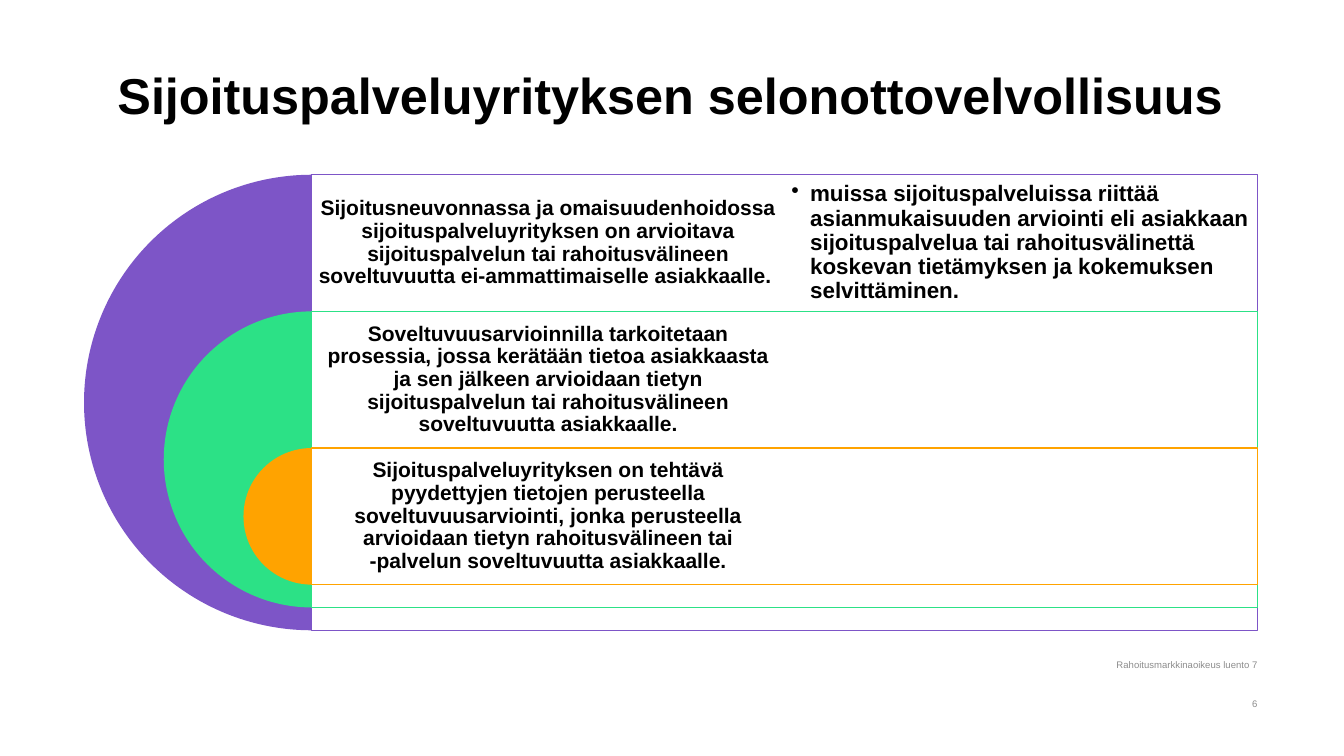
from lxml import etree
from pptx import Presentation
from pptx.dml.color import RGBColor
from pptx.enum.shapes import MSO_SHAPE
from pptx.enum.text import MSO_ANCHOR, PP_ALIGN
from pptx.oxml.ns import qn
from pptx.util import Pt

PIE, RECTANGLE = MSO_SHAPE.PIE, MSO_SHAPE.RECTANGLE
TOP, MIDDLE = MSO_ANCHOR.TOP, MSO_ANCHOR.MIDDLE
LEFT, CENTER, RIGHT = PP_ALIGN.LEFT, PP_ALIGN.CENTER, PP_ALIGN.RIGHT

BLACK = RGBColor(0x00, 0x00, 0x00)
GREY = RGBColor(0x8C, 0x8C, 0x8C)
WHITE = RGBColor(0xFF, 0xFF, 0xFF)
PURPLE = RGBColor(0x7D, 0x55, 0xC7)
GREEN = RGBColor(0x2C, 0xE1, 0x86)
ORANGE = RGBColor(0xFF, 0xA3, 0x00)

prs = Presentation()
prs.slide_width, prs.slide_height = Pt(960), Pt(540)
slide = prs.slides.add_slide(prs.slide_layouts[6])


def add_text(text, box, size, color=BLACK, bold=True, align=CENTER,
             anchor=MIDDLE, insets=(4.5, 4.5, 4.5, 4.5), spacing=1.0):
    frame = slide.shapes.add_textbox(*map(Pt, box)).text_frame
    frame.word_wrap = True
    frame.vertical_anchor = anchor
    (frame.margin_left, frame.margin_top,
     frame.margin_right, frame.margin_bottom) = map(Pt, insets)
    paragraph = frame.paragraphs[0]
    paragraph.alignment = align
    paragraph.line_spacing = spacing
    run = paragraph.add_run()
    run.text = text
    run.font.name = "Arial"
    run.font.size = Pt(size)
    run.font.bold = bold
    run.font.color.rgb = color
    return paragraph


# Title
add_text("Sijoituspalveluyrityksen selonottovelvollisuus", (60, 38, 838, 85), 36,
         anchor=TOP, insets=(7.2, 8, 7.2, 3.6))

# Footer and slide number
for footer, top in (("Rahoitusmarkkinaoikeus luento 7", 468.9), ("6", 496.2)):
    add_text(footer, (518.4, top, 379.8, 12.4), 6.8, color=GREY, bold=False,
             align=RIGHT, insets=(7.2, 3.6, 0, 3.6))

# Nested half circles, each with its panel and duty
DUTIES = (
    (PURPLE, "Sijoitusneuvonnassa ja omaisuudenhoidossa sijoituspalveluyrityksen on "
             "arvioitava sijoituspalvelun tai rahoitusvälineen soveltuvuutta "
             "ei-ammattimaiselle asiakkaalle. "),
    (GREEN, "Soveltuvuusarvioinnilla tarkoitetaan prosessia, jossa kerätään tietoa "
            "asiakkaasta ja sen jälkeen arvioidaan tietyn sijoituspalvelun tai "
            "rahoitusvälineen soveltuvuutta asiakkaalle."),
    (ORANGE, "Sijoituspalveluyrityksen on tehtävä pyydettyjen tietojen perusteella "
             "soveltuvuusarviointi, jonka perusteella arvioidaan tietyn "
             "rahoitusvälineen tai -palvelun soveltuvuutta asiakkaalle."),
)
AXIS, FIRST_TOP = 222.7, 124.8
ROW, COLUMN = 97.6, 337.7
OUTER, SHRINK = 325.4, 113.9

for i, (color, duty) in enumerate(DUTIES):
    top = FIRST_TOP + i * ROW
    diameter = OUTER - i * SHRINK

    half_circle = slide.shapes.add_shape(
        PIE, Pt(AXIS - diameter / 2), Pt(top), Pt(diameter), Pt(diameter))
    half_circle.adjustments[0] = 54
    half_circle.adjustments[1] = 162
    half_circle.shadow.inherit = False
    half_circle.fill.solid()
    half_circle.fill.fore_color.rgb = color
    half_circle.line.fill.background()

    panel = slide.shapes.add_shape(
        RECTANGLE, Pt(AXIS), Pt(top), Pt(2 * COLUMN), Pt(diameter))
    panel.shadow.inherit = False
    panel.fill.solid()
    panel.fill.fore_color.rgb = WHITE
    white = panel.fill._xPr.find(qn("a:solidFill"))[0]
    etree.SubElement(white, qn("a:alpha"), val="90000")
    panel.line.color.rgb = color
    panel.line.width = Pt(0.75)

    add_text(duty, (AXIS, top, COLUMN, ROW), 15, spacing=0.9)

# Bulleted note in the right column
note = add_text(
    "muissa sijoituspalveluissa riittää asianmukaisuuden arviointi eli asiakkaan "
    "sijoituspalvelua tai rahoitusvälinettä koskevan tietämyksen ja kokemuksen "
    "selvittäminen.",
    (AXIS + COLUMN, FIRST_TOP, COLUMN, ROW), 16, align=LEFT,
    insets=(4.8, 4.8, 4.8, 4.8), spacing=0.9)
note_format = note._p.get_or_add_pPr()
note_format.set("marL", str(Pt(13.5)))
note_format.set("indent", str(Pt(-13.5)))
etree.SubElement(note_format, qn("a:buChar"), char="•")

prs.save("out.pptx")
